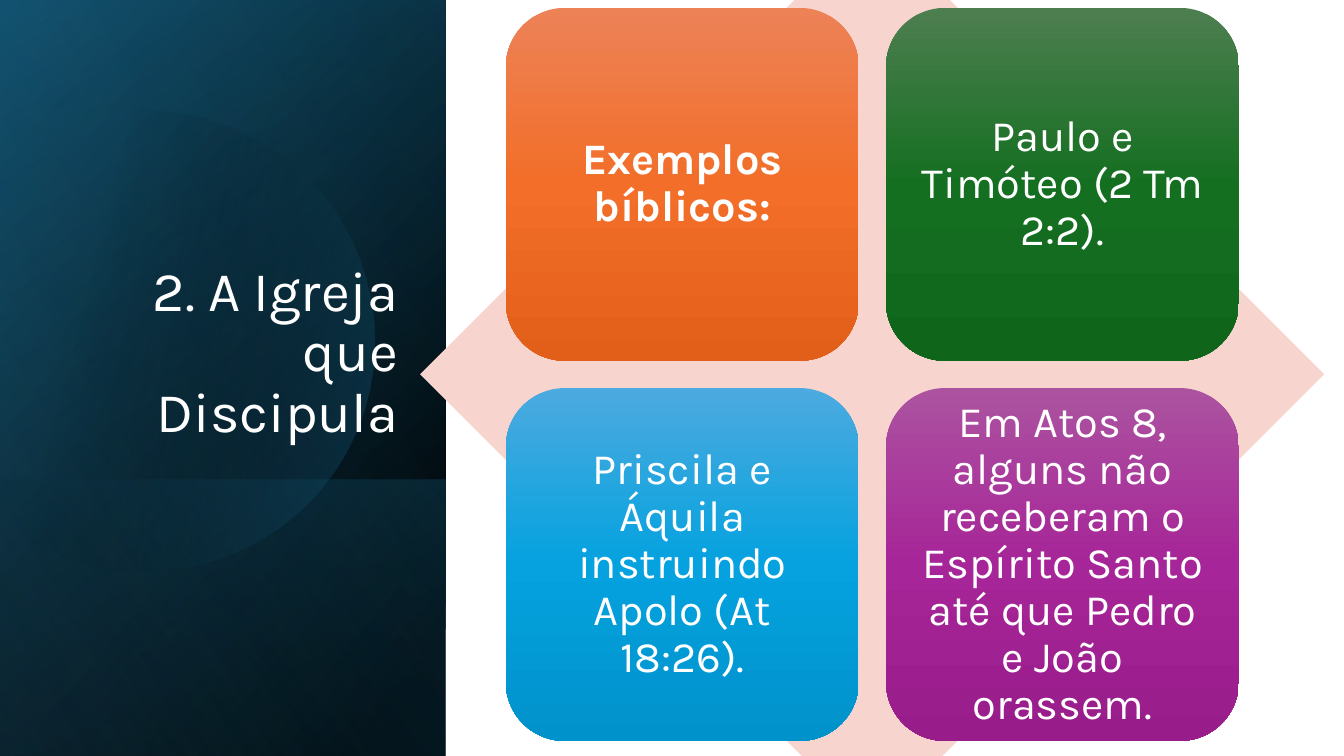
from pptx import Presentation
from pptx.dml.color import RGBColor
from pptx.enum.shapes import MSO_SHAPE
from pptx.enum.text import MSO_ANCHOR, MSO_AUTO_SIZE, PP_ALIGN
from pptx.oxml.ns import qn
from pptx.util import Cm, Pt
from lxml import etree

RECT, ROUND, DIAMOND = MSO_SHAPE.RECTANGLE, MSO_SHAPE.ROUNDED_RECTANGLE, MSO_SHAPE.DIAMOND
MIDDLE, BOTTOM = MSO_ANCHOR.MIDDLE, MSO_ANCHOR.BOTTOM
CENTER, RIGHT = PP_ALIGN.CENTER, PP_ALIGN.RIGHT

FONT = "Karla"
COLORS = {
    "white": "FFFFFF", "black": "000000", "teal": "156082",
    "deep": "104862", "sky": "46B1E1", "pink": "F7D5CE",
}

# Each stop is position, colour name and opacity, in percent.
# Each panel is left, top, width, height before its quarter turn, angle, stops.
FULL = (-3.91, 3.91, 19.05, 11.23)
FOOT = (2.13, 9.96, 6.96, 11.23)
PANELS = [
    (FULL, 50, [(8, "black", 100), (100, "deep", 100)]),
    (FULL, 30, [(0, "black", 0), (99, "teal", 46)]),
    (FOOT, 130, [(2, "teal", 29), (100, "black", 30)]),
]
GLOW = (FULL, 120, [(0, "black", 0), (99, "sky", 11)])

# Disc outline: three points make a curve, one point makes a line.
START = (3.78, 2.79)
DISC = [
    [(6.25, 2.84), (8.51, 4.5), (9.22, 6.99)],
    [(10.11, 10.08), (8.33, 13.28), (5.26, 14.17)],
    [(3.33, 14.73), (1.35, 14.25), (-0.08, 13.06)],
    [(-0.38, 12.78)],
    [(-0.38, 4.45)],
    [(0, 4.09)],
    [(0.58, 3.61), (1.27, 3.23), (2.03, 3.02)],
    [(2.62, 2.87), (3.2, 2.79), START],
]

SIDE, PITCH, LEFT, TOP = 8.89, 9.58, 12.75, 0.2
TILES = [
    ("Exemplos bíblicos:", True, ("ED8257", "F26E29", "E25F1A")),
    ("Paulo e Timóteo (2 Tm 2:2).", False, ("4D7E50", "156F21", "0F661B")),
    ("Priscila e Áquila instruindo Apolo (At 18:26).", False,
     ("4CAADF", "05A2DF", "0092CB")),
    ("Em Atos 8, alguns não receberam o Espírito Santo até que Pedro e João orassem.",
     False, ("AC53A0", "A62598", "991C8B")),
]


def write(shape, text, size, align, anchor, bold=False):
    frame = shape.text_frame
    frame.word_wrap = True
    frame.auto_size = MSO_AUTO_SIZE.NONE
    frame.vertical_anchor = anchor
    para = frame.paragraphs[0]
    para.alignment = align
    para.line_spacing = 0.9
    run = para.add_run()
    run.text = text
    run.font.name = FONT
    run.font.size = Pt(size)
    run.font.bold = bold
    run.font.color.rgb = RGBColor.from_string(COLORS["white"])
    return frame


def shade(shape, angle, stops):
    """Fill with a linear gradient; the angle runs clockwise in degrees."""
    shape.fill.gradient()
    grad = shape._element.spPr.find(qn("a:gradFill"))
    for child in list(grad):
        grad.remove(child)
    group = etree.SubElement(grad, qn("a:gsLst"))
    for place, name, alpha in stops:
        stop = etree.SubElement(group, qn("a:gs"), pos=str(place * 1000))
        color = etree.SubElement(stop, qn("a:srgbClr"), val=COLORS.get(name, name))
        if alpha < 100:
            etree.SubElement(color, qn("a:alpha"), val=str(alpha * 1000))
    etree.SubElement(grad, qn("a:lin"), ang=str(angle * 60000), scaled="0")


def plain(shape):
    shape.shadow.inherit = False
    shape.line.fill.background()
    return shape


def block(slide, kind, *box):
    return plain(slide.shapes.add_shape(kind, *map(Cm, box)))


def panel(slide, box, angle, stops):
    shape = block(slide, RECT, *box)
    shape.rotation = 90
    shape._element.spPr.xfrm.set("flipH", "1")
    shade(shape, angle, stops)


def trace(start, parts, steps=16):
    """Return the points along an outline of curves and lines."""
    points = [start]
    for part in parts:
        if len(part) == 1:
            points += part
            continue
        knots = [points[-1], *part]
        for step in range(1, steps + 1):
            t = step / steps
            u = 1 - t
            parts_of = (u ** 3, 3 * u * u * t, 3 * u * t * t, t ** 3)
            points.append(tuple(
                sum(w * knot[axis] for w, knot in zip(parts_of, knots))
                for axis in (0, 1)))
    return points


def disc(slide):
    first, *rest = [(Cm(x), Cm(y)) for x, y in trace(START, DISC)]
    build = slide.shapes.build_freeform(*first)
    build.add_line_segments(rest, close=True)
    shade(plain(build.convert_to_shape()), 14, [(29, "black", 0), (100, "teal", 43)])


def head(slide, text):
    title = slide.shapes.title
    title.left, title.top, title.width, title.height = map(Cm, (1.63, 4.67, 8.66, 6.65))
    write(title, text, 40, RIGHT, BOTTOM)
    slide.shapes._spTree.append(title._element)  # bring in front of the panels


def tile(slide, index, text, bold, tones):
    row, col = divmod(index, 2)
    shape = block(slide, ROUND, LEFT + col * PITCH, TOP + row * PITCH, SIDE, SIDE)
    shade(shape, 90, [(place, tone, 100) for place, tone in zip((0, 50, 100), tones)])
    frame = write(shape, text, 31, CENTER, MIDDLE, bold)
    frame.margin_left = frame.margin_right = Cm(0.33)
    frame.margin_top = frame.margin_bottom = Cm(0.33)


def main():
    deck = Presentation()
    deck.slide_width, deck.slide_height = Cm(33.87), Cm(19.05)
    slide = deck.slides.add_slide(deck.slide_layouts[5])
    for item in PANELS:
        panel(slide, *item)
    disc(slide)
    panel(slide, *GLOW)
    head(slide, "2. A Igreja que Discipula")
    back = block(slide, DIAMOND, 10.59, -1.96, 22.78, 22.78)
    back.fill.solid()
    back.fill.fore_color.rgb = RGBColor.from_string(COLORS["pink"])
    for index, item in enumerate(TILES):
        tile(slide, index, *item)
    deck.save("out.pptx")


if __name__ == "__main__":
    main()
